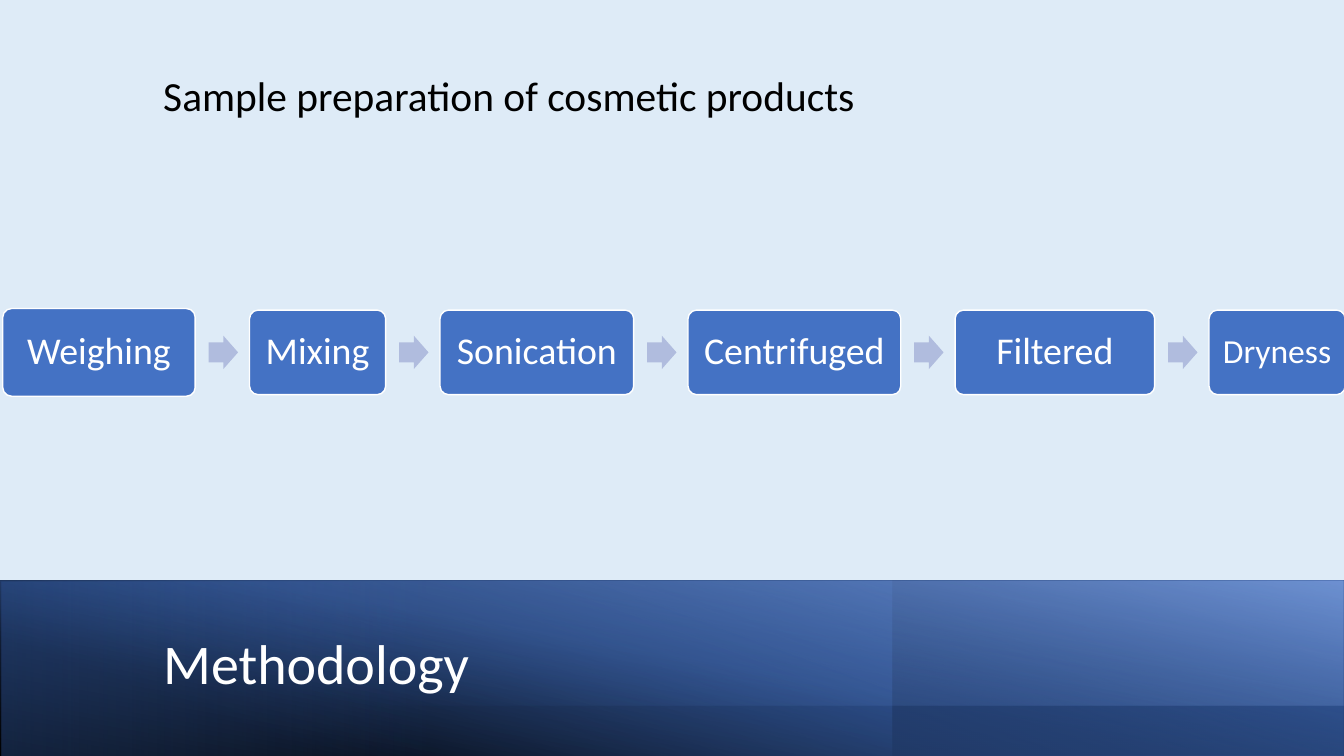
import pptx
import pptx.dml.color
import pptx.enum.shapes
import pptx.enum.text
import pptx.oxml
import pptx.oxml.ns
import pptx.util

Cm = pptx.util.Cm
Pt = pptx.util.Pt
SHAPE = pptx.enum.shapes.MSO_SHAPE
ALIGN = pptx.enum.text.PP_ALIGN
ANCHOR = pptx.enum.text.MSO_ANCHOR


def rgb(color):
    return pptx.dml.color.RGBColor.from_string(color)


def style_text(tf, size, color, align, anchor, spacing):
    tf.auto_size = pptx.enum.text.MSO_AUTO_SIZE.NONE
    tf.vertical_anchor = anchor
    p = tf.paragraphs[0]
    p.alignment = align
    p.line_spacing = spacing
    p.space_before = Pt(0)
    r = p.runs[0]
    r.font.size = Pt(size)
    r.font.name = "Calibri"
    r.font.color.rgb = rgb(color)


prs = pptx.Presentation()
prs.slide_width = Cm(33.87)
prs.slide_height = Cm(19.05)
s = prs.slides.add_slide(prs.slide_layouts[1])
s.background.fill.solid()
s.background.fill.fore_color.rgb = rgb("DEEBF7")
title = s.shapes.title
body = s.placeholders[1]

bands = [
    (0, 14.63, 33.87, 4.42, True, 0, 260, [(0, "000000", 100), (54, "203864", 100)]),
    (-0.05, 14.63, 33.91, 4.42, True, 0, 250, [(18, "2F5597", 0), (100, "4472C4", 100)]),
    (22.5, 14.63, 11.38, 4.42, True, 0, 260, [(23, "203864", 61), (100, "203864", 0)]),
    (-0.03, 14.63, 33.88, 3.15, False, 0, 280, [(18, "4472C4", 0), (100, "8FAADC", 56)]),
    (0.05, 14.66, 21.49, 4.42, False, 180, 0, [(50, "4472C4", 0), (100, "2F5597", 41)]),
]
for left, top, width, height, flip, rotation, angle, stops in bands:
    sp = s.shapes.add_shape(SHAPE.RECTANGLE, Cm(left), Cm(top), Cm(width), Cm(height))
    sp.shadow.inherit = False
    sp.line.fill.background()
    sp.rotation = rotation
    spPr = sp._element.spPr
    if flip:
        spPr.find(pptx.oxml.ns.qn("a:xfrm")).set("flipH", "1")
    gs = "".join(
        f'<a:gs pos="{pos * 1000}"><a:srgbClr val="{color}">'
        f'<a:alpha val="{alpha * 1000}"/></a:srgbClr></a:gs>'
        for pos, color, alpha in stops
    )
    grad = pptx.oxml.parse_xml(
        f'<a:gradFill {pptx.oxml.ns.nsdecls("a")} rotWithShape="1"><a:gsLst>{gs}</a:gsLst>'
        f'<a:lin ang="{angle * 60000}" scaled="0"/></a:gradFill>'
    )
    spPr.find(pptx.oxml.ns.qn("a:prstGeom")).addnext(grad)
    title._element.addprevious(sp._element)

title.left, title.top, title.width, title.height = Cm(3.86), Cm(15.42), Cm(26.82), Cm(2.72)
title.text_frame.text = "Methodology"
style_text(title.text_frame, 40, "FFFFFF", ALIGN.LEFT, ANCHOR.MIDDLE, 0.9)

body.left, body.top, body.width, body.height = Cm(3.86), Cm(2.12), Cm(19.91), Cm(1.2)
tf = body.text_frame
tf.text = "Sample preparation of cosmetic products"
tf.margin_top = tf.margin_bottom = 0
style_text(tf, 29.6, "000000", ALIGN.LEFT, ANCHOR.TOP, 0.7)
pPr = tf.paragraphs[0]._p.get_or_add_pPr()
pPr.set("marL", "0")
pPr.set("indent", "0")
pPr.append(pptx.oxml.parse_xml(f'<a:buNone {pptx.oxml.ns.nsdecls("a")}/>'))

steps = [
    ("Weighing", 4.85, 2.21, 27),
    ("Mixing", 3.43, 2.13, 27),
    ("Sonication", 4.88, 2.13, 27),
    ("Centrifuged", 5.36, 2.13, 27),
    ("Filtered", 5.03, 2.13, 27),
    ("Dryness", 3.43, 2.13, 24),
]
middle = 8.88
gap = 1.37
left = 0.07
for i, (name, width, height, size) in enumerate(steps):
    if i > 0:
        arrow = s.shapes.add_shape(
            SHAPE.RIGHT_ARROW, Cm(left - gap + 0.34), Cm(middle - 0.42), Cm(0.74), Cm(0.84)
        )
        arrow.adjustments[0] = 0.6
        arrow.adjustments[1] = 0.5
        arrow.shadow.inherit = False
        arrow.fill.solid()
        arrow.fill.fore_color.rgb = rgb("B0BCDE")
        arrow.line.fill.background()
    box = s.shapes.add_shape(
        SHAPE.ROUNDED_RECTANGLE, Cm(left), Cm(middle - height / 2), Cm(width), Cm(height)
    )
    box.adjustments[0] = 0.1
    box.shadow.inherit = False
    box.fill.solid()
    box.fill.fore_color.rgb = rgb("4472C4")
    box.line.color.rgb = rgb("FFFFFF")
    box.line.width = Pt(1)
    tf = box.text_frame
    tf.text = name
    tf.word_wrap = False
    tf.margin_left = tf.margin_right = tf.margin_top = tf.margin_bottom = Cm(0.28)
    style_text(tf, size, "FFFFFF", ALIGN.CENTER, ANCHOR.MIDDLE, 0.9)
    left += width + gap

prs.save("out.pptx")
